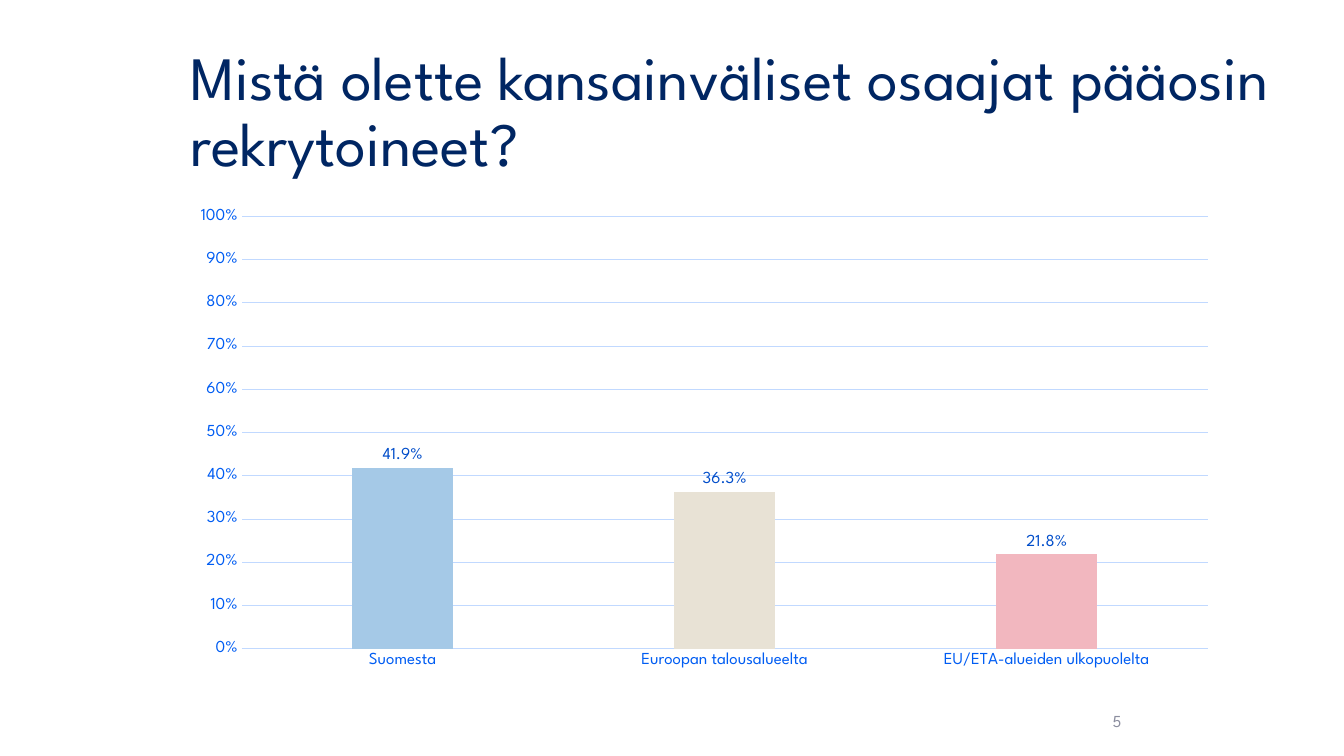
"""Build a slide with a column chart of where international talent was recruited."""
from lxml import etree
from pptx import Presentation
from pptx.chart.data import CategoryChartData
from pptx.dml.color import RGBColor
from pptx.enum.chart import XL_CHART_TYPE, XL_LABEL_POSITION, XL_TICK_MARK
from pptx.enum.text import MSO_ANCHOR, PP_ALIGN
from pptx.oxml.ns import qn
from pptx.util import Inches, Pt

COLUMN_CLUSTERED = XL_CHART_TYPE.COLUMN_CLUSTERED
OUTSIDE_END = XL_LABEL_POSITION.OUTSIDE_END
NO_TICK = XL_TICK_MARK.NONE
MIDDLE = MSO_ANCHOR.MIDDLE
LEFT, RIGHT = PP_ALIGN.LEFT, PP_ALIGN.RIGHT

NAVY = RGBColor(0x00, 0x26, 0x63)
GREY = RGBColor(0x8C, 0x8E, 0x9F)
AXIS_BLUE = RGBColor(0x00, 0x5D, 0xF3)
LABEL_BLUE = RGBColor(0x00, 0x4D, 0xCA)
GRID_BLUE = RGBColor(0xC1, 0xD9, 0xFF)
WHITE = RGBColor(0xFF, 0xFF, 0xFF)
SKY = RGBColor(0xA5, 0xC9, 0xE7)
SAND = RGBColor(0xE8, 0xE2, 0xD5)
PINK = RGBColor(0xF2, 0xB7, 0xBF)

FONT = "League Spartan"
WIDTH, HEIGHT = Inches(13.33), Inches(7.5)
TITLE_AREA = (13.43, 5.33, 82.07, 19.33)
CHART_AREA = (13.13, 26.67, 79.44, 63.47)
NUMBER_AREA = (70.67, 92.67, 13.5, 5.33)
PLOT_AREA = {"x": 6.1, "y": 3.1, "w": 90.5, "h": 90.1}
SOURCES = [
    ("Suomesta", 0.419, SKY),
    ("Euroopan talousalueelta", 0.363, SAND),
    ("EU/ETA-alueiden ulkopuolelta", 0.218, PINK),
]


def place(area):
    """Turn percentages of the slide into left, top, width and height."""
    sides = (WIDTH, HEIGHT, WIDTH, HEIGHT)
    return [int(side * share / 100) for side, share in zip(sides, area)]


def style_font(font, size, color):
    """Set typeface, size and colour."""
    font.name = FONT
    font.size = Pt(size)
    font.color.rgb = color


def style_line(line):
    """Give an axis or a grid its thin pale line."""
    line.color.rgb = GRID_BLUE
    line.width = Pt(0.75)


def add_text(page, area, text, size, color, align=LEFT, spacing=1.0):
    """Add a vertically centred text box with one run."""
    box = page.shapes.add_textbox(*place(area))
    frame = box.text_frame
    frame.word_wrap = True
    frame.vertical_anchor = MIDDLE
    para = frame.paragraphs[0]
    para.alignment = align
    para.line_spacing = spacing
    run = para.add_run()
    run.text = text
    style_font(run.font, size, color)


def set_plot_area(chart):
    """Fix the inner plot area as shares of the chart."""
    plot_area = chart.element.find(".//" + qn("c:plotArea"))
    for old in plot_area.findall(qn("c:layout")):
        plot_area.remove(old)
    layout = etree.Element(qn("c:layout"))
    manual = etree.SubElement(layout, qn("c:manualLayout"))
    settings = [("layoutTarget", "inner"), ("xMode", "edge"), ("yMode", "edge")]
    settings += [(key, f"{share / 100:.3f}") for key, share in PLOT_AREA.items()]
    for name, value in settings:
        etree.SubElement(manual, qn("c:" + name)).set("val", value)
    plot_area.insert(0, layout)


def style_axes(chart):
    """Format the category axis, value axis and gridlines."""
    category, value = chart.category_axis, chart.value_axis
    for axis in (category, value):
        axis.major_tick_mark = axis.minor_tick_mark = NO_TICK
        style_font(axis.tick_labels.font, 12, AXIS_BLUE)
    style_line(category.format.line)
    value.format.line.fill.background()
    value.minimum_scale, value.maximum_scale, value.major_unit = 0, 1, 0.1
    value.tick_labels.number_format = "0%"
    value.tick_labels.number_format_is_linked = False
    value.has_major_gridlines = True
    style_line(value.major_gridlines.format.line)


def style_columns(plot):
    """Space, colour and label the columns."""
    plot.gap_width, plot.overlap = 219, -27
    plot.vary_by_categories = False
    series = plot.series[0]
    for index, (_, _, color) in enumerate(SOURCES):
        fill = series.points[index].format.fill
        fill.solid()
        fill.fore_color.rgb = color
    labels = series.data_labels
    labels.show_value = True
    labels.position = OUTSIDE_END
    labels.number_format = "0.0%"
    labels.number_format_is_linked = False
    style_font(labels.font, 12, LABEL_BLUE)


def add_source_chart(page):
    """Add the recruitment source column chart."""
    data = CategoryChartData()
    data.categories = [name for name, _, _ in SOURCES]
    data.add_series("Series 1", [value for _, value, _ in SOURCES])
    chart = page.shapes.add_chart(COLUMN_CLUSTERED, *place(CHART_AREA), data).chart
    chart.has_legend = False
    chart.has_title = False
    style_font(chart.font, 10, NAVY)
    set_plot_area(chart)
    style_axes(chart)
    style_columns(chart.plots[0])


def main():
    """Build and save the deck."""
    deck = Presentation()
    deck.slide_width, deck.slide_height = WIDTH, HEIGHT
    page = deck.slides.add_slide(deck.slide_layouts[6])
    page.background.fill.solid()
    page.background.fill.fore_color.rgb = WHITE
    title = "Mistä olette kansainväliset osaajat pääosin rekrytoineet?"
    add_text(page, TITLE_AREA, title, 44, NAVY, spacing=0.9)
    add_text(page, NUMBER_AREA, "5", 12, GREY, align=RIGHT)
    add_source_chart(page)
    deck.save("out.pptx")


if __name__ == "__main__":
    main()
